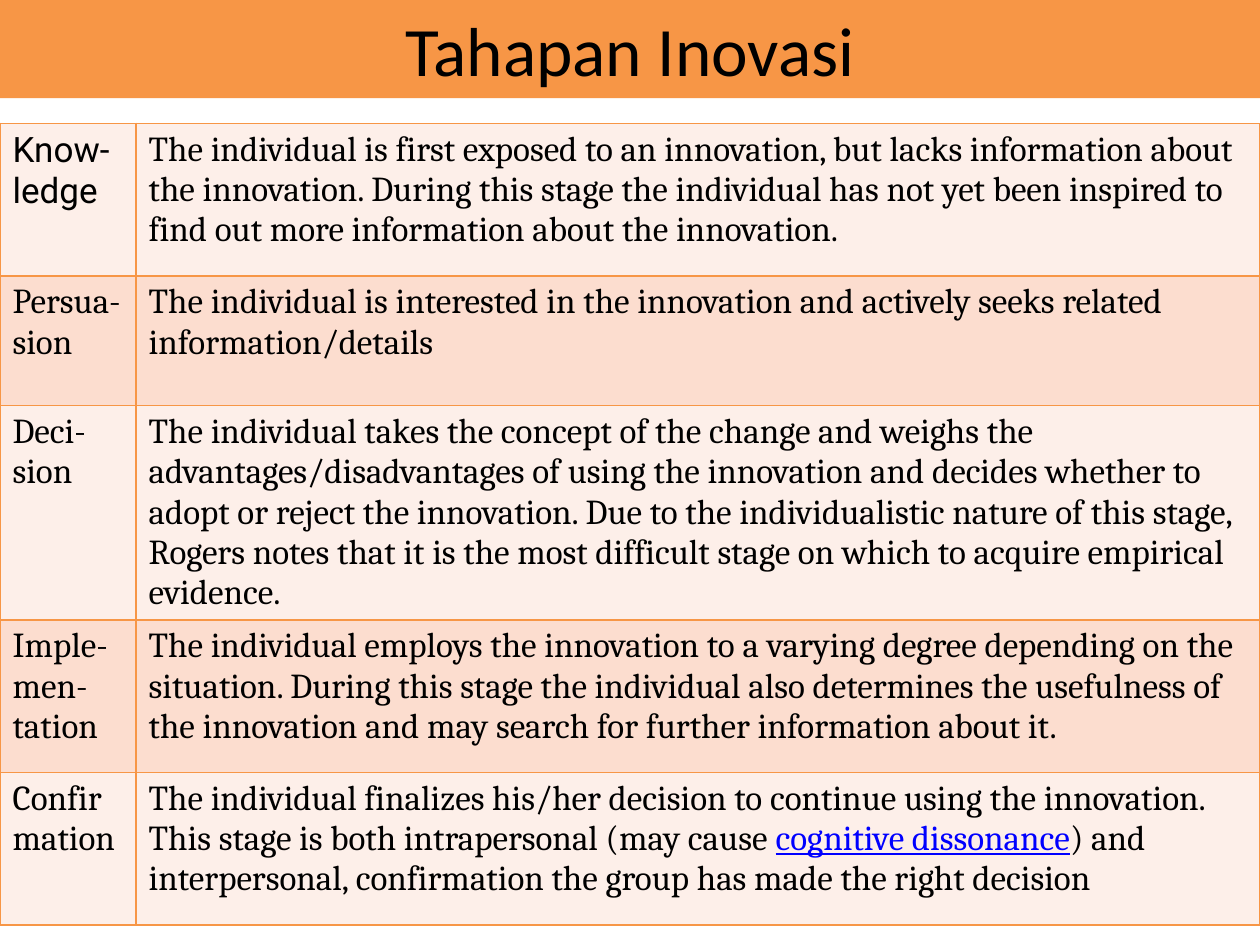
import pptx
import pptx.util
import pptx.dml.color
import pptx.enum.text
import pptx.oxml
import pptx.oxml.ns
from lxml import etree

Inches = pptx.util.Inches
Pt = pptx.util.Pt

COLORS = {
    "orange": "F79646",
    "pale": "FDEFE9",
    "peach": "FCDDCF",
    "black": "000000",
    "blue": "0000FF",
}

STAGES = [
    ("Know-ledge", 1.21, [
        "The individual is first exposed to an innovation, but lacks information "
        "about the innovation. During this stage the individual has not yet been "
        "inspired to find out more information about the innovation."]),
    ("Persua-sion", 1.03, [
        "The individual is interested in the innovation and actively seeks related "
        "information/details"]),
    ("Deci-sion", 1.58, [
        "The individual takes the concept of the change and weighs the "
        "advantages/disadvantages of using the innovation and decides whether to "
        "adopt or reject the innovation. Due to the individualistic nature of this "
        "stage, Rogers notes that it is the most difficult stage on which to "
        "acquire empirical evidence."]),
    ("Imple-men-tation", 1.21, [
        "The individual employs the innovation to a varying degree depending on "
        "the situation. During this stage the individual also determines the "
        "usefulness of the innovation and may search for further information "
        "about it."]),
    ("Confirmation", 1.21, [
        "The individual finalizes his/her decision to continue using the "
        "innovation. This stage is both intrapersonal (may cause ",
        "cognitive dissonance",
        ") and interpersonal, confirmation the group has made the right decision"]),
]


def tint(name):
    return pptx.dml.color.RGBColor.from_string(COLORS[name])


def style(font, face, size):
    font.name = face
    font.size = Pt(size)
    font.color.rgb = tint("black")


def add_title(slide, left, top, width, height):
    title = slide.shapes.title
    title.left, title.top = Inches(left), Inches(top)
    title.width, title.height = Inches(width), Inches(height)
    title.fill.solid()
    title.fill.fore_color.rgb = tint("orange")
    frame = title.text_frame
    frame.text = "Tahapan Inovasi"
    frame.auto_size = pptx.enum.text.MSO_AUTO_SIZE.NONE
    frame.vertical_anchor = pptx.enum.text.MSO_ANCHOR.MIDDLE
    para = frame.paragraphs[0]
    para.alignment = pptx.enum.text.PP_ALIGN.CENTER
    style(para.font, "Calibri", 39.6)


def add_edges(cell):
    props = cell._tc.get_or_add_tcPr()
    qn = pptx.oxml.ns.qn
    for spot, side in enumerate(("a:lnL", "a:lnR", "a:lnT", "a:lnB")):
        line = etree.Element(qn(side), w=str(Pt(1)))
        fill = etree.SubElement(line, qn("a:solidFill"))
        etree.SubElement(fill, qn("a:srgbClr"), val=COLORS["orange"])
        props.insert(spot, line)


def fill_cell(cell, parts, face, shade):
    cell.fill.solid()
    cell.fill.fore_color.rgb = tint(shade)
    add_edges(cell)
    para = cell.text_frame.paragraphs[0]
    style(para.font, face, 20)
    for order, text in enumerate(parts):
        run = para.add_run()
        run.text = text
        style(run.font, face, 20)
        if order == 1:
            run.font.color.rgb = tint("blue")
            run.font.underline = True


def add_stages(slide, left, top, width, height):
    table = slide.shapes.add_table(
        len(STAGES), 2, Inches(left), Inches(top), Inches(width), Inches(height)).table
    table.first_row = False
    table.horz_banding = False
    label = 1.08
    table.columns[0].width = Inches(label)
    table.columns[1].width = Inches(width - label)
    for index, (name, tall, parts) in enumerate(STAGES):
        table.rows[index].height = Inches(tall)
        shade = "peach" if index % 2 else "pale"
        face = "Cambria" if index else "Roboto"
        fill_cell(table.cell(index, 0), [name], face, shade)
        fill_cell(table.cell(index, 1), parts, "Cambria", shade)


def main():
    deck = pptx.Presentation()
    deck.slide_width, deck.slide_height = Inches(10), Inches(7.5)
    slide = deck.slides.add_slide(deck.slide_layouts[5])
    add_title(slide, 0, 0, 10, 0.78)
    add_stages(slide, 0, 0.98, 10, 6.44)
    deck.save("out.pptx")


if __name__ == "__main__":
    main()
